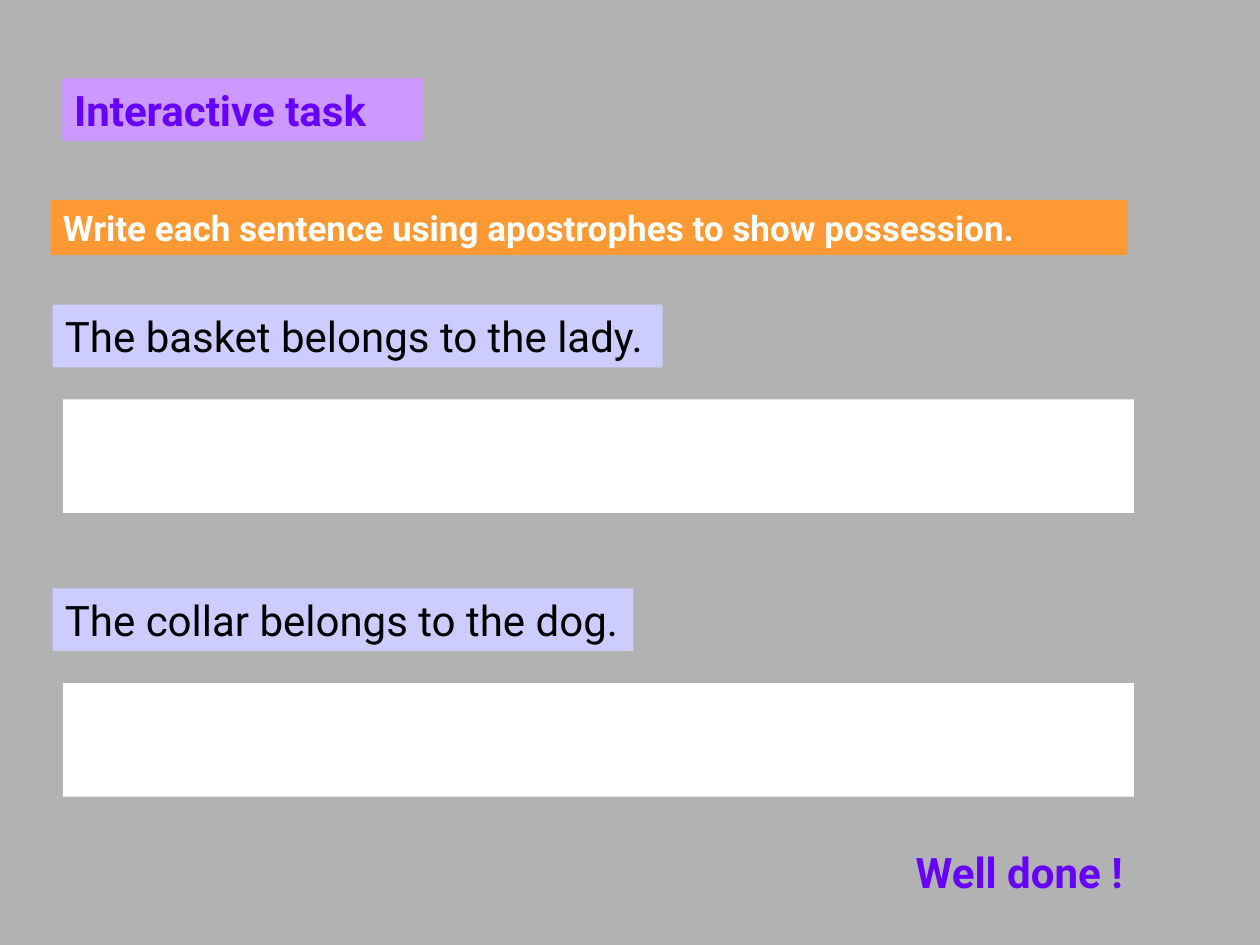
import pptx
import pptx.util
import pptx.dml.color
import pptx.enum.shapes
import pptx.enum.text

COLORS = {
    "background": "B2B2B2",
    "violet": "CC99FF",
    "purple": "6600FF",
    "orange": "FF9933",
    "lavender": "CCCCFF",
    "white": "FFFFFF",
    "black": "000000",
}
Cm = pptx.util.Cm


class TaskSlide:
    font = "Roboto"

    def __init__(self, prs):
        self.s = prs.slides.add_slide(prs.slide_layouts[5])
        self.paint(self.s.background, "background")

    def paint(self, target, color):
        target.fill.solid()
        target.fill.fore_color.rgb = pptx.dml.color.RGBColor.from_string(COLORS[color])

    def set_text(self, sp, text, size, color, bold):
        tf = sp.text_frame
        tf.word_wrap = True
        tf.auto_size = pptx.enum.text.MSO_AUTO_SIZE.NONE
        tf.vertical_anchor = pptx.enum.text.MSO_ANCHOR.TOP
        p = tf.paragraphs[0]
        p.alignment = pptx.enum.text.PP_ALIGN.LEFT
        r = p.add_run()
        r.text = text
        r.font.name = self.font
        r.font.size = pptx.util.Pt(size)
        r.font.bold = bold
        r.font.color.rgb = pptx.dml.color.RGBColor.from_string(COLORS[color])

    def title(self, text, x, y, w, h, fill, color):
        sp = self.s.shapes.title
        sp.left, sp.top, sp.width, sp.height = Cm(x), Cm(y), Cm(w), Cm(h)
        self.paint(sp, fill)
        self.set_text(sp, text, 24, color, True)

    def label(self, text, x, y, w, h, color, fill=None, size=24, bold=False):
        sp = self.s.shapes.add_textbox(Cm(x), Cm(y), Cm(w), Cm(h))
        if fill:
            self.paint(sp, fill)
        self.set_text(sp, text, size, color, bold)

    def answer_box(self, x, y, w, h):
        sp = self.s.shapes.add_shape(
            pptx.enum.shapes.MSO_SHAPE.RECTANGLE, Cm(x), Cm(y), Cm(w), Cm(h))
        sp.shadow.inherit = False
        self.paint(sp, "white")
        sp.line.fill.background()


def main():
    prs = pptx.Presentation()
    prs.slide_width, prs.slide_height = Cm(25.4), Cm(19.05)
    task = TaskSlide(prs)

    task.title("Interactive task", 1.24, 1.57, 7.29, 1.27, "violet", "purple")
    task.label("Write each sentence using apostrophes to show possession.",
               1.02, 4.03, 21.71, 1.11, "white", "orange", size=20, bold=True)

    questions = [
        ("The basket belongs to the lady.", 12.3),
        ("The collar belongs to the dog.", 11.71),
    ]
    for i, (sentence, width) in enumerate(questions):
        top = 6.14 + i * 5.72
        task.label(sentence, 1.06, top, width, 1.27, "black", "lavender")
        task.answer_box(1.27, top + 1.91, 21.59, 2.29)

    task.label("Well done !", 18.21, 16.93, 5.28, 1.27, "purple", bold=True)
    prs.save("out.pptx")


if __name__ == "__main__":
    main()
